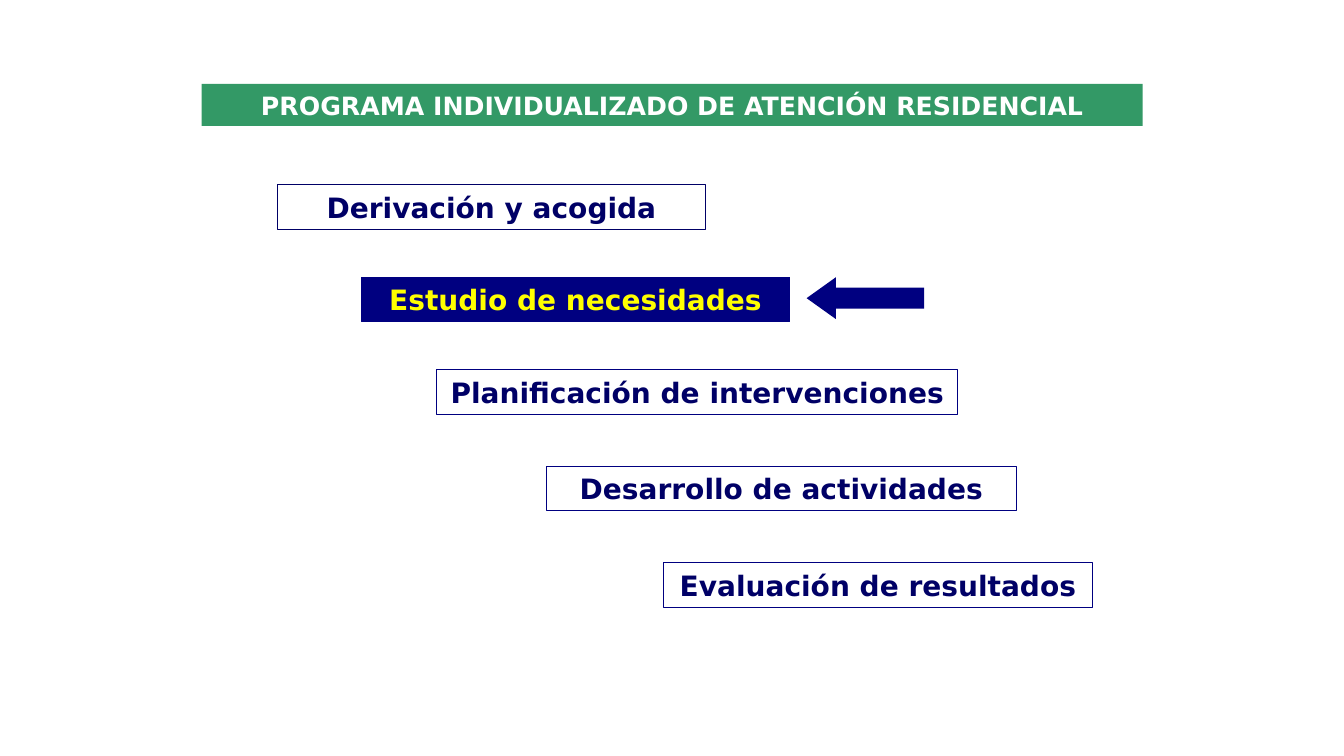
from dataclasses import dataclass
from typing import Optional

from pptx import Presentation
from pptx.dml.color import RGBColor
from pptx.enum.shapes import MSO_SHAPE as Geo
from pptx.enum.text import MSO_ANCHOR as Anchor, MSO_AUTO_SIZE as AutoSize, PP_ALIGN as Align
from pptx.util import Inches, Pt

# Grid: 160 columns by 90 rows, twelve to the inch
CELL = Inches(1) / 12


@dataclass(frozen=True)
class Theme:
    font: str = "DejaVu Sans"
    title_size: int = 18
    step_size: int = 20
    line_width: float = 0.75
    green: str = "339966"
    navy: str = "000080"
    ink: str = "000066"
    yellow: str = "FFFF00"
    white: str = "FFFFFF"


@dataclass(frozen=True)
class Box:
    col: float
    row: float
    cols: float
    rows: float
    fill: Optional[str] = None
    line: Optional[str] = None


@dataclass(frozen=True)
class Step:
    text: str
    col: float
    row: float
    cols: float = 51
    line: str = Theme.navy
    active: bool = False


TH = Theme()
STEP_ROWS = 5.3
TITLE = Box(24, 10, 112, 5, fill=TH.green)
ARROW = Box(96, 33, 14, 5, fill=TH.navy)
STEPS = [
    Step("Derivación y acogida", 33, 22, line=TH.ink),
    Step("Estudio de necesidades", 43, 33, active=True),
    Step("Planificación de intervenciones", 52, 44, cols=62),
    Step("Desarrollo de actividades", 65, 55.5, cols=56),
    Step("Evaluación de resultados", 79, 67),
]


def add_box(slide, box: Box, geo=Geo.RECTANGLE):
    sp = slide.shapes.add_shape(
        geo, *(round(n * CELL) for n in (box.col, box.row, box.cols, box.rows)))
    sp.shadow.inherit = False
    if box.fill:
        sp.fill.solid()
        sp.fill.fore_color.rgb = RGBColor.from_string(box.fill)
    else:
        sp.fill.background()
    if box.line:
        sp.line.color.rgb = RGBColor.from_string(box.line)
        sp.line.width = Pt(TH.line_width)
    else:
        sp.line.fill.background()
    return sp


def set_text(sp, text: str, size: int, color: str) -> None:
    tf = sp.text_frame
    tf.word_wrap = True
    tf.vertical_anchor = Anchor.MIDDLE
    p = tf.paragraphs[0]
    p.text = text
    p.alignment = Align.CENTER
    p.font.name = TH.font
    p.font.size = Pt(size)
    p.font.bold = True
    p.font.color.rgb = RGBColor.from_string(color)


def add_step(slide, step: Step) -> None:
    fill = TH.navy if step.active else None
    sp = add_box(slide, Box(step.col, step.row, step.cols, STEP_ROWS, fill, step.line))
    set_text(sp, step.text, TH.step_size, TH.yellow if step.active else TH.ink)
    sp.text_frame.auto_size = AutoSize.SHAPE_TO_FIT_TEXT


def main() -> None:
    prs = Presentation()
    prs.slide_width, prs.slide_height = Inches(13.33), Inches(7.5)
    s = prs.slides.add_slide(prs.slide_layouts[6])

    # Staircase of programme steps
    for step in STEPS:
        add_step(s, step)

    # Arrow pointing at the active step
    arrow = add_box(s, ARROW, Geo.LEFT_ARROW)
    arrow.adjustments[0] = 0.5
    arrow.adjustments[1] = 0.7

    # Title band
    set_text(add_box(s, TITLE), "PROGRAMA INDIVIDUALIZADO DE ATENCIÓN RESIDENCIAL",
             TH.title_size, TH.white)

    prs.save("out.pptx")


if __name__ == "__main__":
    main()
